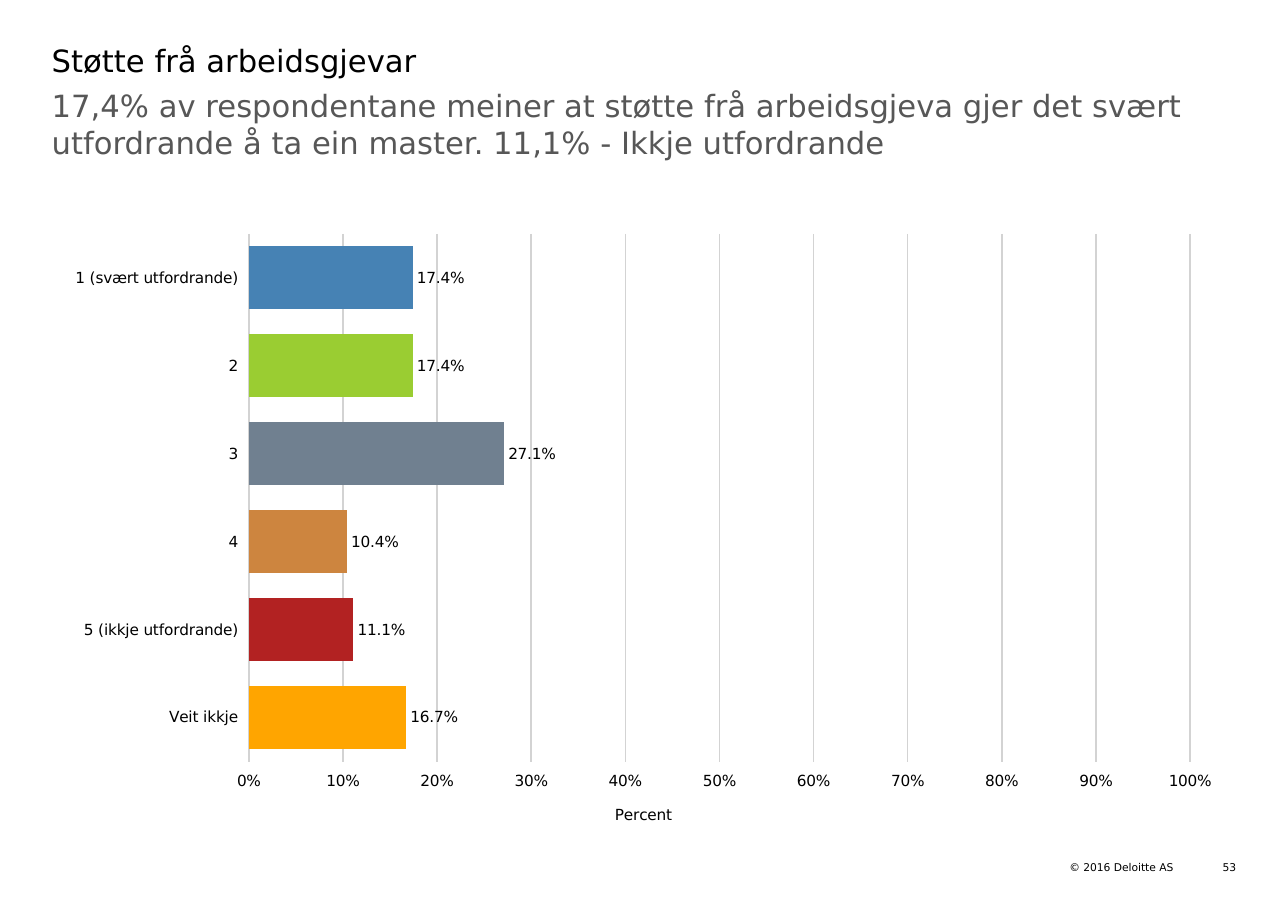
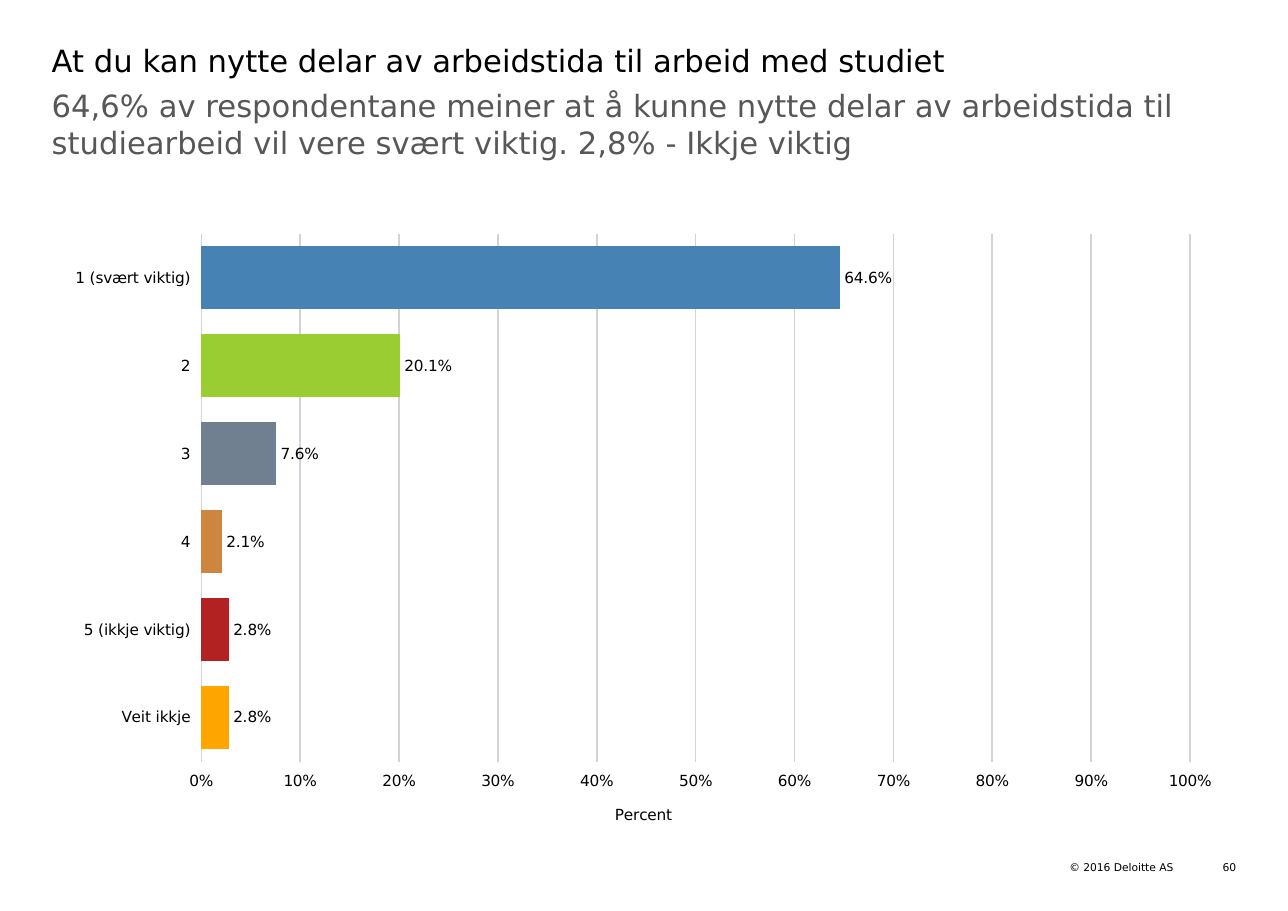
from dataclasses import dataclass

from pptx import Presentation
from pptx.chart.data import CategoryChartData
from pptx.dml.color import RGBColor
from pptx.enum.chart import XL_CHART_TYPE, XL_LABEL_POSITION, XL_TICK_LABEL_POSITION, XL_TICK_MARK
from pptx.enum.text import MSO_ANCHOR, PP_ALIGN
from pptx.util import Pt

BAR = XL_CHART_TYPE.BAR_CLUSTERED
OUTSIDE = XL_LABEL_POSITION.OUTSIDE_END
HIGH = XL_TICK_LABEL_POSITION.HIGH
CROSS = XL_TICK_MARK.CROSS
NO_TICK = XL_TICK_MARK.NONE
LEFT, RIGHT = PP_ALIGN.LEFT, PP_ALIGN.RIGHT
TOP, MIDDLE = MSO_ANCHOR.TOP, MSO_ANCHOR.MIDDLE

SLIDES = [
    {
        "number": "53",
        "title": "Støtte frå arbeidsgjevar",
        "finding": "17,4% av respondentane meiner at støtte frå arbeidsgjeva gjer det svært "
                   "utfordrande å ta ein master. 11,1% - Ikkje utfordrande",
        "answers": [("1 (svært utfordrande)", 0.174), ("2", 0.174), ("3", 0.271),
                    ("4", 0.104), ("5 (ikkje utfordrande)", 0.111), ("Veit ikkje", 0.167)],
    },
    {
        "number": "60",
        "title": "At du kan nytte delar av arbeidstida til arbeid med studiet",
        "finding": "64,6% av respondentane meiner at å kunne nytte delar av arbeidstida til "
                   "studiearbeid vil vere svært viktig. 2,8% - Ikkje viktig",
        "answers": [("1 (svært viktig)", 0.646), ("2", 0.201), ("3", 0.076),
                    ("4", 0.021), ("5 (ikkje viktig)", 0.028), ("Veit ikkje", 0.028)],
    },
]
COPYRIGHT = "© 2016 Deloitte AS"
AXIS_TITLE = "Percent"


@dataclass(frozen=True)
class Theme:
    font: str = "DejaVu Sans"
    text: str = "000000"
    muted: str = "575757"
    grid: str = "D3D3D3"
    bars: tuple = ("4682B4", "9ACD32", "708090", "CD853F", "B22222", "FFA500")
    heading: int = 20
    label: int = 10
    footer: int = 7


THEME = Theme()
PX = 9144
PAGE = (1169, 827)
MARGIN, CONTENT_W = 47, 1074
TITLE_BOX = (MARGIN, 38, CONTENT_W, 40)
FINDING_BOX = (MARGIN, 79, CONTENT_W, 91)
CHART_BOX = (MARGIN, 201, CONTENT_W, 568)
COPYRIGHT_BOX = (968, 781, 97, 12)
NUMBER_BOX = (1092, 781, 30, 12)


def emu(box):
    return [v * PX for v in box]


def style(font, size, color=THEME.text):
    font.name = THEME.font
    font.size = Pt(size)
    font.bold = False
    font.color.rgb = RGBColor.from_string(color)


def add_text(s, box, text, size, color=THEME.text, align=LEFT, anchor=TOP, wrap=True):
    tf = s.shapes.add_textbox(*emu(box)).text_frame
    tf.margin_left = tf.margin_right = tf.margin_top = tf.margin_bottom = 0
    tf.word_wrap = wrap
    tf.vertical_anchor = anchor
    tf.text = text
    p = tf.paragraphs[0]
    p.alignment = align
    style(p.runs[0].font, size, color)


def style_axes(chart):
    categories, values = chart.category_axis, chart.value_axis
    for axis in (categories, values):
        axis.major_tick_mark = CROSS
        axis.minor_tick_mark = NO_TICK
        axis.format.line.fill.background()
        style(axis.tick_labels.font, THEME.label)
    categories.reverse_order = True
    categories.has_major_gridlines = False
    values.tick_label_position = HIGH
    values.minimum_scale, values.maximum_scale, values.major_unit = 0, 1, 0.1
    values.tick_labels.number_format = "0%"
    values.tick_labels.number_format_is_linked = False
    values.has_major_gridlines = True
    grid = values.major_gridlines.format.line
    grid.color.rgb = RGBColor.from_string(THEME.grid)
    grid.width = Pt(1)
    tf = values.axis_title.text_frame
    tf.text = AXIS_TITLE
    style(tf.paragraphs[0].runs[0].font, THEME.label)


def add_answer_chart(s, answers):
    data = CategoryChartData(number_format="0.0%")
    data.categories = [name for name, _ in answers]
    data.add_series("Series 1", [share for _, share in answers])
    chart = s.shapes.add_chart(BAR, *emu(CHART_BOX), data).chart
    chart.has_title = chart.has_legend = False
    style(chart.font, THEME.label)
    style_axes(chart)

    plot = chart.plots[0]
    plot.gap_width = 40
    plot.vary_by_categories = False
    series = plot.series[0]
    for i, color in enumerate(THEME.bars):
        fill = series.points[i].format.fill
        fill.solid()
        fill.fore_color.rgb = RGBColor.from_string(color)

    plot.has_data_labels = True
    labels = plot.data_labels
    labels.show_value = True
    labels.position = OUTSIDE
    labels.number_format = "0.0%"
    labels.number_format_is_linked = False
    style(labels.font, THEME.label)


def add_footer(s, number):
    for box, text in ((COPYRIGHT_BOX, COPYRIGHT), (NUMBER_BOX, number)):
        add_text(s, box, text, THEME.footer, align=RIGHT, anchor=MIDDLE, wrap=False)


def main():
    prs = Presentation()
    prs.slide_width, prs.slide_height = emu(PAGE)
    for content in SLIDES:
        s = prs.slides.add_slide(prs.slide_layouts[6])
        add_text(s, TITLE_BOX, content["title"], THEME.heading)
        add_text(s, FINDING_BOX, content["finding"], THEME.heading, THEME.muted)
        add_answer_chart(s, content["answers"])
        add_footer(s, content["number"])
    prs.save("out.pptx")


if __name__ == "__main__":
    main()
